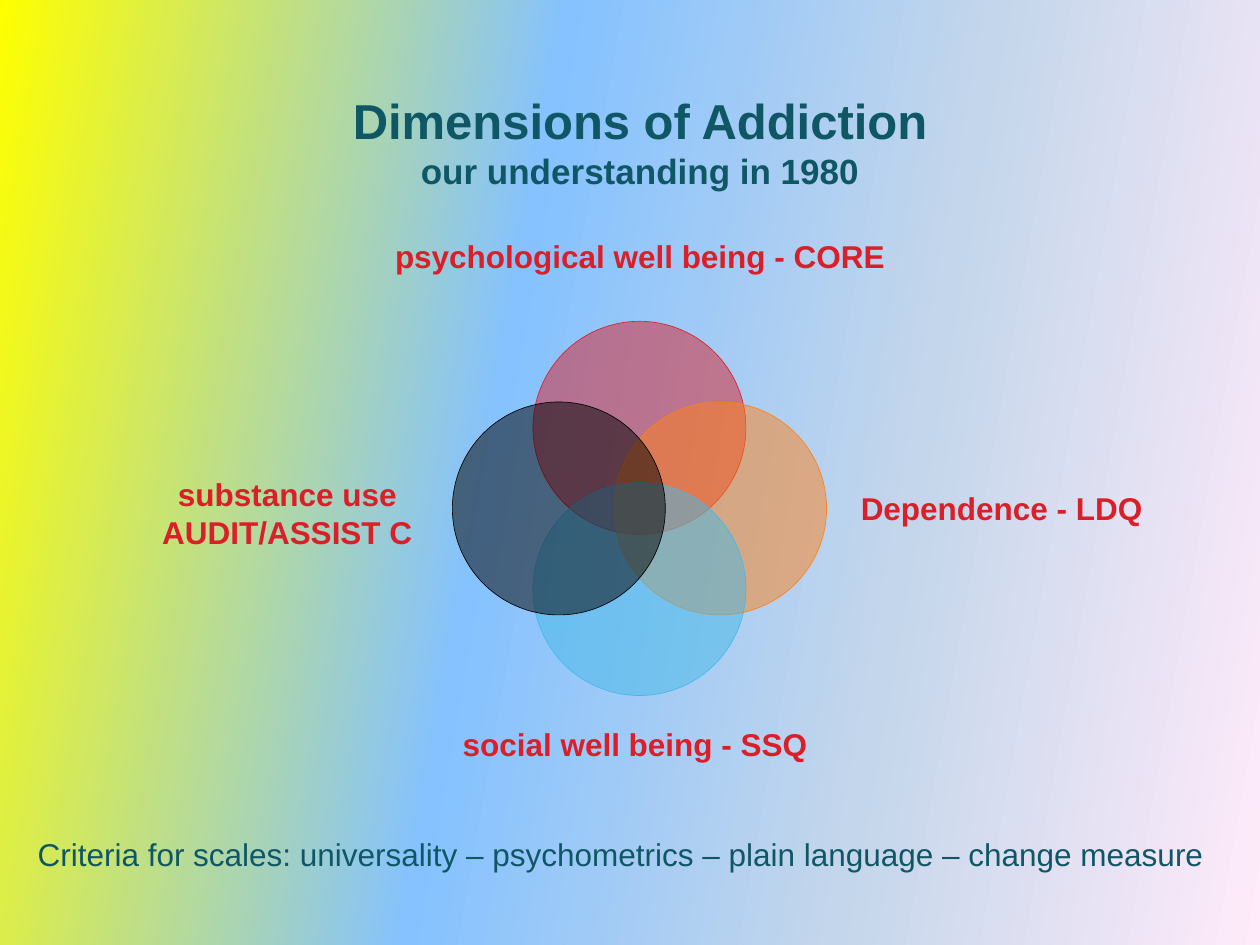
from dataclasses import dataclass

from lxml.etree import SubElement
from pptx import Presentation
from pptx.dml.color import RGBColor
from pptx.enum.shapes import MSO_SHAPE
from pptx.enum.text import MSO_ANCHOR, MSO_AUTO_SIZE, PP_ALIGN
from pptx.oxml.ns import qn
from pptx.util import Inches, Pt


@dataclass(frozen=True)
class Theme:
    """Colours, font and type sizes of the deck."""
    font: str = "Arial"
    teal: str = "105766"
    red: str = "DA1F28"
    orange: str = "FF8119"
    blue: str = "44B9E8"
    black: str = "000000"
    title_size: int = 28
    subtitle_size: int = 20
    body_size: int = 18
    backdrop: tuple = ((0, "FFFF00"), (40, "85C2FF"), (70, "C4D6EB"), (100, "FFEBFA"))
    backdrop_angle: int = 10


THEME = Theme()


def add_span(para, text, size=THEME.body_size, color=THEME.teal, bold=False):
    """Append formatted text to a paragraph."""
    span = para.add_run()
    span.text = text
    span.font.name = THEME.font
    span.font.size = Pt(size)
    span.font.bold = bold
    span.font.color.rgb = RGBColor.from_string(color)


def paint_backdrop(page):
    """Fill the page background with the angled gradient."""
    fill = page.background.fill
    fill.gradient()
    gradient = page.background._cSld.find(".//" + qn("a:gradFill"))
    stops = gradient.find(qn("a:gsLst"))
    for stop in list(stops):
        stops.remove(stop)
    for position, color in THEME.backdrop:
        stop = SubElement(stops, qn("a:gs"), pos=str(position * 1000))
        SubElement(stop, qn("a:srgbClr"), val=color)
    direction = gradient.find(qn("a:lin"))
    direction.set("ang", str(THEME.backdrop_angle * 60000))
    direction.set("scaled", "0")


def place_title(page, left, top, width, height):
    """Place the heading and its second line in the title placeholder."""
    title = page.shapes.title
    title.left, title.top, title.width, title.height = map(Inches, (left, top, width, height))
    frame = title.text_frame
    frame.auto_size = MSO_AUTO_SIZE.NONE
    frame.vertical_anchor = MSO_ANCHOR.MIDDLE
    para = frame.paragraphs[0]
    para.alignment = PP_ALIGN.CENTER
    add_span(para, "Dimensions of Addiction", size=THEME.title_size, bold=True)
    para.add_line_break()
    add_span(para, "our understanding in 1980", size=THEME.subtitle_size, bold=True)


def add_circle(shapes, left, top, diameter, color):
    """Add one half-transparent circle of the diagram."""
    circle = shapes.add_shape(MSO_SHAPE.OVAL, *map(Inches, (left, top, diameter, diameter)))
    circle.shadow.inherit = False
    circle.fill.solid()
    circle.fill.fore_color.rgb = RGBColor.from_string(color)
    tint = circle.fill._xPr.find(qn("a:solidFill")).find(qn("a:srgbClr"))
    SubElement(tint, qn("a:alpha"), val="50000")
    circle.line.color.rgb = RGBColor.from_string(color)
    circle.line.width = Pt(0.37)


def add_label(shapes, left, top, width, height, lines):
    """Add a centred red label with one paragraph per line."""
    frame = shapes.add_textbox(*map(Inches, (left, top, width, height))).text_frame
    frame.word_wrap = False
    frame.vertical_anchor = MSO_ANCHOR.MIDDLE
    frame.margin_left = frame.margin_right = frame.margin_top = frame.margin_bottom = 0
    for index, line in enumerate(lines):
        para = frame.add_paragraph() if index else frame.paragraphs[0]
        para.alignment = PP_ALIGN.CENTER
        add_span(para, line, color=THEME.red, bold=True)


def place_diagram(page, left, top, size):
    """Place four overlapping circles and their labels around a square box."""
    diameter = 1.69
    reach = (size - diameter) / 2
    shapes = page.shapes.add_group_shape().shapes
    dimensions = (
        (1, 0, THEME.red, (-0.48, -0.73, 3.94, 0.42), ["psychological well being - CORE"]),
        (2, 1, THEME.orange, (3.14, 1.27, 2.44, 0.42), ["Dependence - LDQ"]),
        (1, 2, THEME.blue, (0.03, 3.14, 2.84, 0.42), ["social well being - SSQ"]),
        (0, 1, THEME.black, (-2.45, 1.2, 2.28, 0.64), ["substance use", "AUDIT/ASSIST C"]),
    )
    for column, row, color, (across, down, width, height), lines in dimensions:
        add_circle(shapes, left + column * reach, top + row * reach, diameter, color)
        add_label(shapes, left + across, top + down, width, height, lines)


def place_criteria(page, left, top, width, height):
    """Place the closing line on the criteria for scales."""
    frame = page.shapes.add_textbox(*map(Inches, (left, top, width, height))).text_frame
    frame.word_wrap = False
    frame.auto_size = MSO_AUTO_SIZE.SHAPE_TO_FIT_TEXT
    add_span(
        frame.paragraphs[0],
        "Criteria for scales: universality – psychometrics – plain language – change measure",
    )


def main():
    """Build the deck and save it."""
    deck = Presentation()
    deck.slide_width, deck.slide_height = Inches(10), Inches(7.5)
    page = deck.slides.add_slide(deck.slide_layouts[5])
    paint_backdrop(page)
    place_title(page, 0.83, 0.68, 8.5, 0.88)
    place_diagram(page, 3.59, 2.55, 2.97)
    place_criteria(page, 0.2, 6.58, 9.55, 0.4)
    deck.save("out.pptx")


if __name__ == "__main__":
    main()
